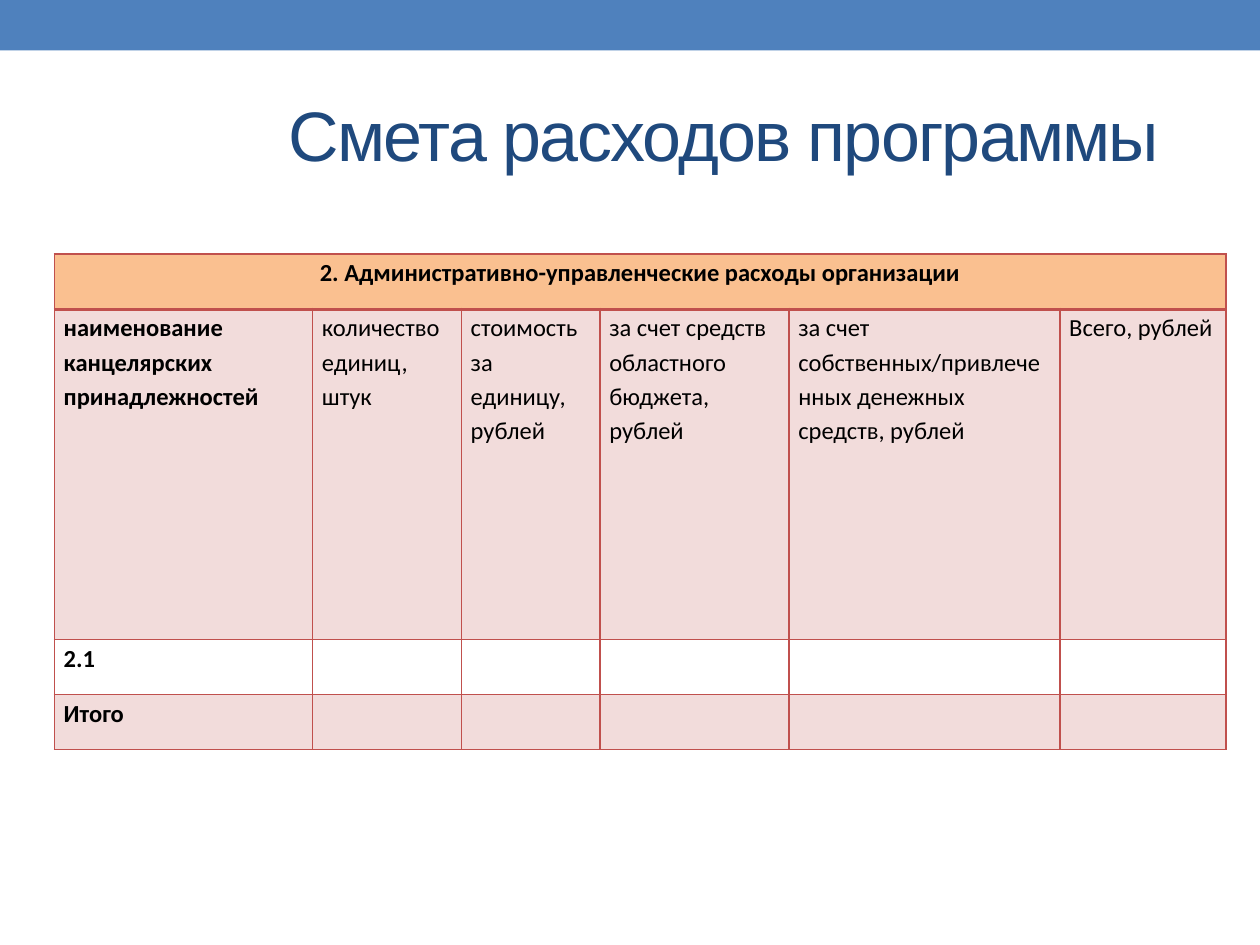
from dataclasses import dataclass

from lxml import etree
from pptx import Presentation
from pptx.dml.color import RGBColor
from pptx.enum.shapes import MSO_SHAPE
from pptx.enum.text import MSO_ANCHOR, MSO_AUTO_SIZE, PP_ALIGN
from pptx.oxml.ns import qn
from pptx.util import Pt

RECT = MSO_SHAPE.RECTANGLE
LEFT, CENTER = PP_ALIGN.LEFT, PP_ALIGN.CENTER
TOP, MIDDLE = MSO_ANCHOR.TOP, MSO_ANCHOR.MIDDLE
NO_AUTOFIT = MSO_AUTO_SIZE.NONE
TITLE_ONLY = 5

COLORS = {
    "band": "4F81BD",
    "title": "1F497D",
    "text": "000000",
    "section": "FAC090",
    "accent": "C0504D",
}
COLUMN_WIDTHS = [147.6, 85, 79.2, 108, 154.8, 95]
ROW_HEIGHTS = [31.5, 188.7, 31.5, 31.5]


@dataclass
class Row:
    texts: list[str]
    bold_cells: int = 1
    fill: str | None = None
    opacity: int = 100
    align: PP_ALIGN = LEFT
    top_line: float = 1
    bottom_line: float = 1


ROWS = [
    Row(["2. Административно-управленческие расходы организации"],
        fill="section", align=CENTER, bottom_line=2),
    Row(["наименование канцелярских принадлежностей",
         "количество единиц, штук",
         "стоимость за единицу, рублей",
         "за счет средств областного бюджета, рублей",
         "за счет собственных/привлеченных денежных средств, рублей",
         "Всего, рублей"],
        fill="accent", opacity=20, top_line=2),
    Row(["2.1"]),
    Row(["Итого"], fill="accent", opacity=20),
]


def rgb(name: str) -> RGBColor:
    return RGBColor.from_string(COLORS[name])


def add_run(p, text: str, size: float, font: str, color: str, bold: bool = False):
    r = p.add_run()
    r.text = text
    r.font.size = Pt(size)
    r.font.name = font
    r.font.bold = bold
    r.font.color.rgb = rgb(color)
    return r


def set_borders(cell, top: float, bottom: float) -> None:
    tc_pr = cell._tc.get_or_add_tcPr()
    for side, width in (("L", 1), ("R", 1), ("T", top), ("B", bottom)):
        ln = etree.SubElement(tc_pr, qn(f"a:ln{side}"), w=str(Pt(width)))
        fill = etree.SubElement(ln, qn("a:solidFill"))
        etree.SubElement(fill, qn("a:srgbClr"), val=COLORS["accent"])


def set_fill(cell, row: Row) -> None:
    if row.fill is None:
        cell.fill.background()
        return
    cell.fill.solid()
    cell.fill.fore_color.rgb = rgb(row.fill)
    if row.opacity < 100:
        color = cell._tc.tcPr.find(f"{qn('a:solidFill')}/{qn('a:srgbClr')}")
        etree.SubElement(color, qn("a:alpha"), val=str(row.opacity * 1000))


def format_cell(cell, row: Row, col: int) -> None:
    set_borders(cell, row.top_line, row.bottom_line)
    set_fill(cell, row)
    cell.margin_left = cell.margin_right = Pt(5.4)
    cell.margin_top = cell.margin_bottom = Pt(0)
    cell.vertical_anchor = TOP
    p = cell.text_frame.paragraphs[0]
    p.alignment = row.align
    p.line_spacing = 1.15
    if col < len(row.texts):
        add_run(p, row.texts[col], 14, "Calibri", "text", col < row.bold_cells)


def add_band(s) -> None:
    sp = s.shapes.add_shape(RECT, Pt(0), Pt(0), Pt(720), Pt(28.8))
    sp.shadow.inherit = False
    sp.fill.solid()
    sp.fill.fore_color.rgb = rgb("band")
    sp.line.fill.background()


def add_title(s, text: str) -> None:
    sp = s.shapes.title
    sp.left, sp.top, sp.width, sp.height = Pt(157.7), Pt(37.4), Pt(559.4), Pt(77.8)
    tf = sp.text_frame
    tf.word_wrap = True
    tf.auto_size = NO_AUTOFIT
    tf.vertical_anchor = MIDDLE
    p = tf.paragraphs[0]
    p.alignment = LEFT
    r = add_run(p, text, 40, "Arial", "title")
    r.font._element.set("spc", "-100")


def add_budget_table(s) -> None:
    frame = s.shapes.add_table(len(ROWS), len(COLUMN_WIDTHS), Pt(31), Pt(145.2),
                               Pt(sum(COLUMN_WIDTHS)), Pt(sum(ROW_HEIGHTS)))
    table = frame.table
    table.first_row = table.horz_banding = False
    for column, width in zip(table.columns, COLUMN_WIDTHS):
        column.width = Pt(width)
    for i, (row, height) in enumerate(zip(ROWS, ROW_HEIGHTS)):
        table.rows[i].height = Pt(height)
        for col in range(len(COLUMN_WIDTHS)):
            format_cell(table.cell(i, col), row, col)
    # The section heading spans the whole first row
    table.cell(0, 0).merge(table.cell(0, len(COLUMN_WIDTHS) - 1))


def main() -> None:
    prs = Presentation()
    prs.slide_width, prs.slide_height = Pt(720), Pt(540)
    s = prs.slides.add_slide(prs.slide_layouts[TITLE_ONLY])
    add_band(s)
    add_title(s, "Смета расходов программы")
    add_budget_table(s)
    prs.save("out.pptx")


if __name__ == "__main__":
    main()
